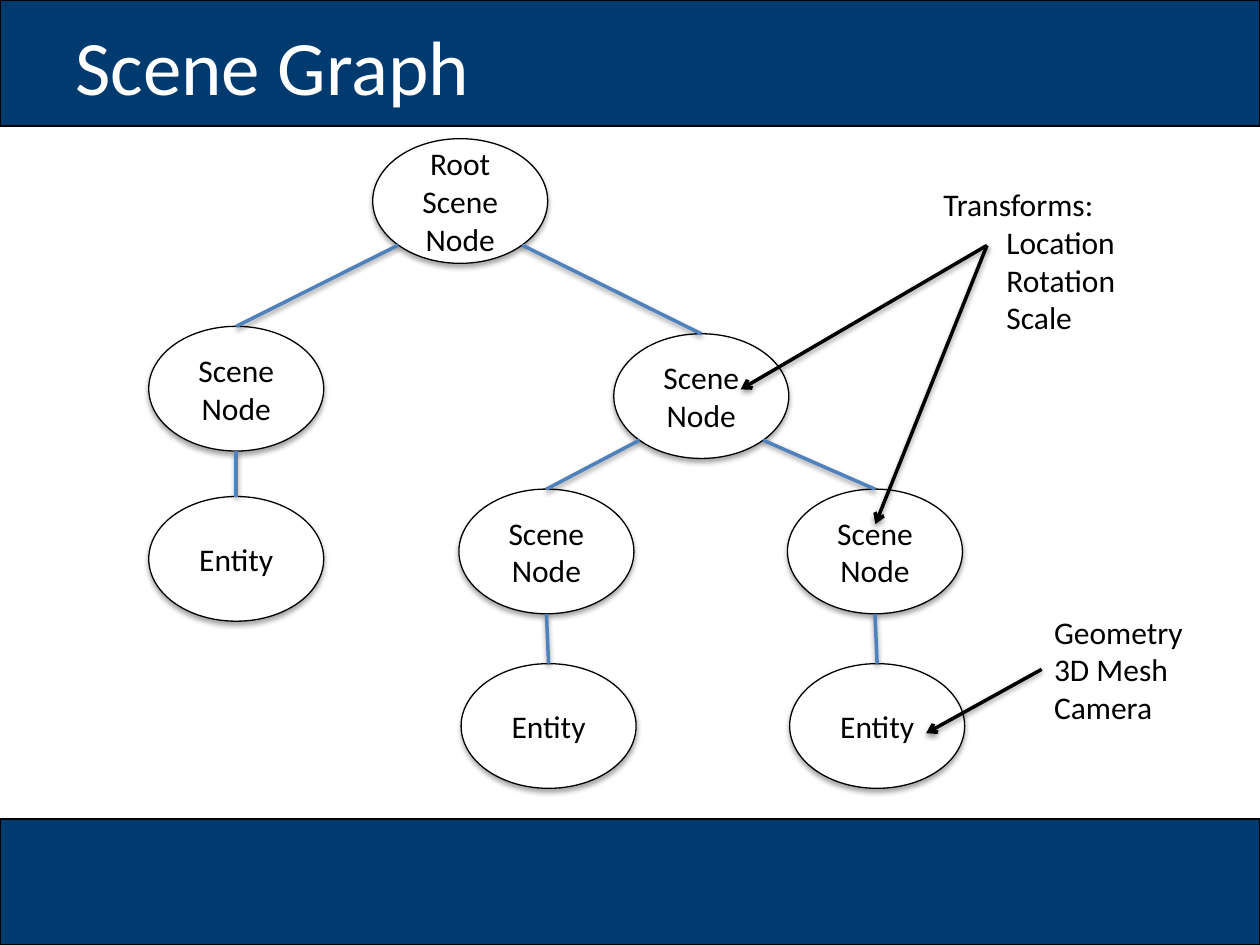
from collections import namedtuple
from dataclasses import dataclass

from lxml import etree
from pptx import Presentation
from pptx.dml.color import RGBColor
from pptx.enum import shapes, text
from pptx.oxml import ns
from pptx.util import Pt

Box = namedtuple("Box", "left top width height")


@dataclass(frozen=True)
class Theme:
    font: str = "Calibri"
    title_size: int = 44
    body_size: int = 18
    navy: RGBColor = RGBColor(0x00, 0x3A, 0x6E)
    blue: RGBColor = RGBColor(0x4F, 0x81, 0xBD)
    black: RGBColor = RGBColor(0, 0, 0)
    white: RGBColor = RGBColor(0xFF, 0xFF, 0xFF)
    outline: float = 0.75
    link: float = 2


THEME = Theme()
NODE_WIDTH, NODE_HEIGHT = 100, 71.25
DIAGONAL = 0.5 ** 0.5 / 2  # offset of the 45 degree points on an ellipse


def points(*values):
    return [Pt(value) for value in values]


def add_child(parent, tag, **attributes):
    return etree.SubElement(parent, ns.qn(tag), attributes)


def add_shadow(item, opacity, distance):
    """Drop a soft shadow straight down."""
    properties = item._element.spPr
    effects = properties.find(ns.qn("a:effectLst"))
    if effects is None:
        effects = add_child(properties, "a:effectLst")
    shadow = add_child(effects, "a:outerShdw", blurRad=str(Pt(3.1)),
                       dist=str(Pt(distance)), dir="5400000", rotWithShape="0")
    color = add_child(shadow, "a:srgbClr", val=str(THEME.black))
    add_child(color, "a:alpha", val=str(opacity * 1000))


def write(frame, wording, size, color, align=text.PP_ALIGN.LEFT):
    frame.text = wording
    for para in frame.paragraphs:
        para.alignment = align
        for span in para.runs:
            span.font.name = THEME.font
            span.font.size = Pt(size)
            span.font.color.rgb = color


def draw_shape(page, kind, box, fill):
    shape = page.shapes.add_shape(kind, *points(*box))
    shape.shadow.inherit = False
    shape.fill.solid()
    shape.fill.fore_color.rgb = fill
    shape.line.color.rgb = THEME.black
    shape.line.width = Pt(THEME.outline)
    return shape


def draw_band(page, box, title=None):
    draw_shape(page, shapes.MSO_SHAPE.RECTANGLE, box, THEME.navy)
    if title:
        heading = page.shapes.add_textbox(
            *points(box.left + 36, box.top, box.width - 72, box.height + 1.5))
        frame = heading.text_frame
        frame.word_wrap = True
        frame.vertical_anchor = text.MSO_ANCHOR.MIDDLE
        write(frame, title, THEME.title_size, THEME.white)


def draw_node(page, box, wording):
    node = draw_shape(page, shapes.MSO_SHAPE.OVAL, box, THEME.white)
    add_shadow(node, 35, 1.8)
    node.text_frame.vertical_anchor = text.MSO_ANCHOR.MIDDLE
    write(node.text_frame, wording, THEME.body_size, THEME.black, text.PP_ALIGN.CENTER)


def draw_link(page, start, end, color, arrow=False):
    link = page.shapes.add_connector(
        shapes.MSO_CONNECTOR.STRAIGHT, *points(*start, *end))
    link.line.color.rgb = color
    link.line.width = Pt(THEME.link)
    if arrow:
        add_child(link.line._get_or_add_ln(), "a:tailEnd", type="arrow")
    add_shadow(link, 38, 1.6)


def rim(box, across, down):
    """Point on the node at an offset from its centre, in parts of its size."""
    return (box.left + box.width * (0.5 + across),
            box.top + box.height * (0.5 + down))


def draw_tree(page, area):
    # Nodes: name, wording, offset within the area
    nodes = [
        ("root", "Root\nScene\nNode", 128, 0),
        ("left", "Scene\nNode", 0, 107.25),
        ("right", "Scene\nNode", 265.75, 111.5),
        ("inner", "Scene\nNode", 177.25, 200.25),
        ("outer", "Scene\nNode", 365, 200.25),
        ("left entity", "Entity", 0, 204.5),
        ("inner entity", "Entity", 178.5, 300),
        ("outer entity", "Entity", 366.25, 300),
    ]
    boxes = {}
    for name, wording, across, down in nodes:
        boxes[name] = Box(area.left + across, area.top + down, NODE_WIDTH, NODE_HEIGHT)
        draw_node(page, boxes[name], wording)

    # Edges: parent, child, side of the parent (-1 left, 0 bottom, 1 right)
    edges = [
        ("root", "left", -1), ("root", "right", 1),
        ("right", "inner", -1), ("right", "outer", 1),
        ("left", "left entity", 0),
        ("inner", "inner entity", 0),
        ("outer", "outer entity", 0),
    ]
    for parent, child, side in edges:
        start = rim(boxes[parent], side * DIAGONAL, DIAGONAL if side else 0.5)
        draw_link(page, start, rim(boxes[child], 0, -0.5), THEME.blue)


def draw_note(page, box, wording, tail, targets):
    """Note with arrows from a point within its box to each target."""
    note = page.shapes.add_textbox(*points(*box))
    frame = note.text_frame
    frame.word_wrap = False
    frame.auto_size = text.MSO_AUTO_SIZE.SHAPE_TO_FIT_TEXT
    write(frame, wording, THEME.body_size, THEME.black)
    for para in frame.paragraphs:
        if para.text.startswith("\t"):
            tabs = add_child(para._p.get_or_add_pPr(), "a:tabLst")
            add_child(tabs, "a:tab", pos=str(Pt(36)), algn="l")
    start = box.left + tail[0], box.top + tail[1]
    for target in targets:
        draw_link(page, start, target, THEME.black, arrow=True)


def main():
    deck = Presentation()
    deck.slide_width, deck.slide_height = points(720, 540)
    page = deck.slides.add_slide(deck.slide_layouts[6])

    # Bands
    draw_band(page, Box(0, 468, 720, 72))
    draw_band(page, Box(0, 0, 720, 72), "Scene Graph")

    # Scene graph
    draw_tree(page, Box(85, 79.25, 466.25, 371.25))

    # Notes
    draw_note(page, Box(595.25, 346.5, 88.5, 72.75), "Geometry\n3D Mesh\nCamera",
              (0, 36), [(529.25, 419)])
    draw_note(page, Box(532, 102.25, 114.5, 94.5),
              "Transforms:\n\tLocation\n\tRotation\n\tScale",
              (32, 38), [(423.25, 222.5), (500.25, 299.5)])

    deck.save("out.pptx")


if __name__ == "__main__":
    main()
